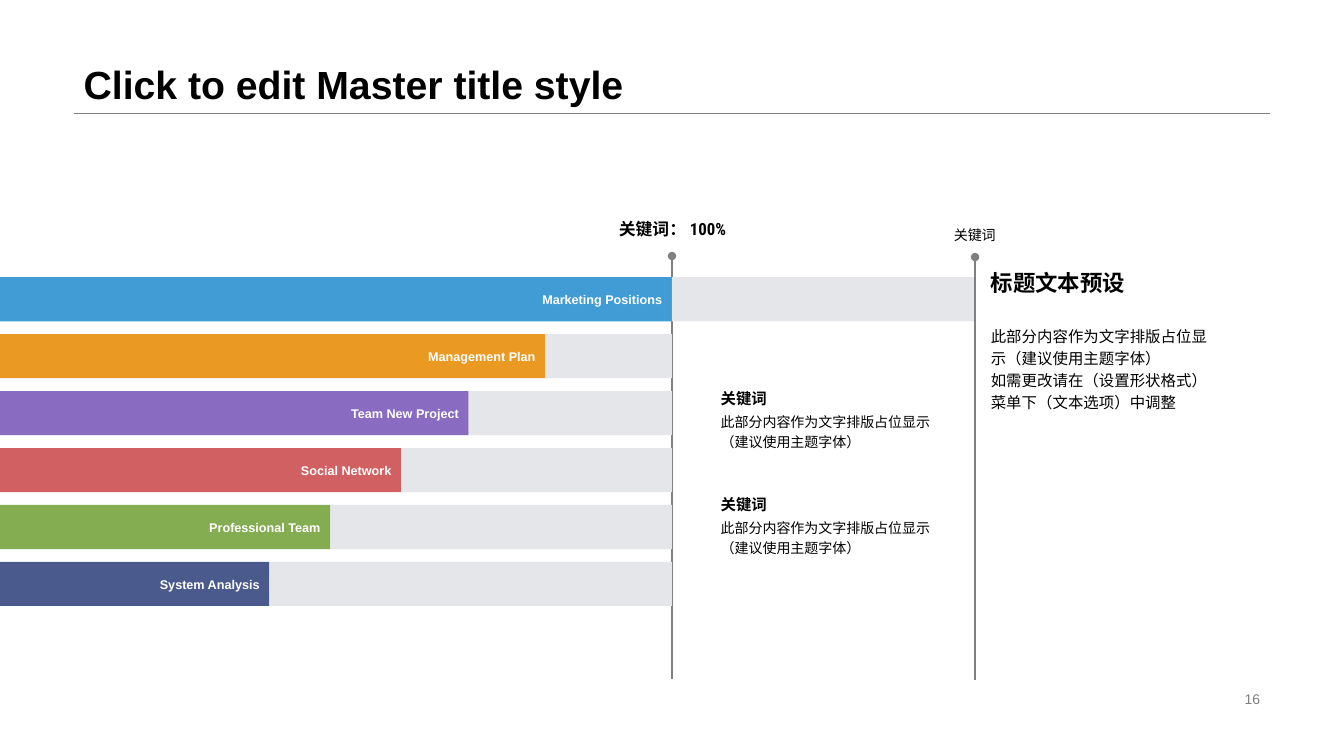
import dataclasses

import lxml.etree
import pptx
import pptx.dml.color
import pptx.enum.shapes
import pptx.enum.text
import pptx.oxml.ns
import pptx.util

ALIGN = pptx.enum.text.PP_ALIGN
ANCHOR = pptx.enum.text.MSO_ANCHOR
RECTANGLE = pptx.enum.shapes.MSO_SHAPE.RECTANGLE


@dataclasses.dataclass(frozen=True)
class Theme:
    font: str = "Arial"
    accent_font: str = "Roboto Condensed"
    ink: str = "000000"
    paper: str = "FFFFFF"
    gray: str = "808080"
    track: str = "E4E6EA"
    title: int = 28
    heading: int = 16
    percent: int = 12
    body: int = 11
    small: int = 10
    label: int = 9


theme = Theme()
deck = pptx.Presentation()
deck.slide_width = pptx.util.Inches(13.33)
deck.slide_height = pptx.util.Inches(7.5)
column = deck.slide_width / 40
row = deck.slide_height / 30
page = deck.slides.add_slide(deck.slide_layouts[5])


def write(box, text, size=theme.body, color=theme.ink, font=theme.font, bold=False,
          align=ALIGN.LEFT, anchor=ANCHOR.MIDDLE, spacing=1.0, inset=None, wrap=True):
    frame = box.text_frame
    frame.auto_size = pptx.enum.text.MSO_AUTO_SIZE.NONE
    frame.word_wrap = wrap
    frame.vertical_anchor = anchor
    if inset is not None:
        frame.margin_left = frame.margin_right = inset
        frame.margin_top = frame.margin_bottom = inset
    para = frame.paragraphs[0]
    para.text = text
    para.alignment = align
    para.line_spacing = spacing
    for span in para.runs:
        span.font.name = font
        span.font.size = pptx.util.Pt(size)
        span.font.bold = bold
        span.font.color.rgb = pptx.dml.color.RGBColor.from_string(color)


def draw_line(left, top, right, bottom, weight, dot=False):
    line = page.shapes.add_connector(
        pptx.enum.shapes.MSO_CONNECTOR.STRAIGHT,
        int(column * left), int(row * top), int(column * right), int(row * bottom))
    line.line.color.rgb = pptx.dml.color.RGBColor.from_string(theme.gray)
    line.line.width = pptx.util.Pt(weight)
    if dot:
        outline = line.line._get_or_add_ln()
        lxml.etree.SubElement(outline, pptx.oxml.ns.qn("a:headEnd"), type="oval")
    lxml.etree.SubElement(line._element.spPr, pptx.oxml.ns.qn("a:effectLst"))


title = page.shapes.title
title.left, title.top = int(column * 2.19), 0
title.width, title.height = int(column * 35.61), int(row * 4.48)
write(title, "Click to edit Master title style", size=theme.title, bold=True,
      anchor=ANCHOR.BOTTOM, spacing=0.9)
draw_line(2.19, 4.48, 37.8, 4.48, 0.25)

FIRST_BAR, BAR_PITCH, BAR_HEIGHT = 11, 2.26, 1.75
FULL, EXTENDED = 20, 29.02
projects = [
    ("Marketing Positions", FULL, EXTENDED, "419CD6"),
    ("Management Plan", 16.23, FULL, "EA9922"),
    ("Team New Project", 13.95, FULL, "8A6BC2"),
    ("Social Network", 11.94, FULL, "D06061"),
    ("Professional Team", 9.83, FULL, "84AD52"),
    ("System Analysis", 8.02, FULL, "4A5A8C"),
]
bars = [(index, 0, end, color, name)
        for index, (name, end, limit, color) in enumerate(projects)]
tracks = [(index, end, limit, theme.track, "")
          for index, (name, end, limit, color) in enumerate(projects)]

for group in (bars, tracks):
    for index, start, end, color, name in group:
        bar = page.shapes.add_shape(
            RECTANGLE, int(column * start), int(row * (FIRST_BAR + BAR_PITCH * index)),
            int(column * (end - start)), int(row * BAR_HEIGHT))
        bar.shadow.inherit = False
        bar.fill.solid()
        bar.fill.fore_color.rgb = pptx.dml.color.RGBColor.from_string(color)
        bar.line.fill.background()
        if name:
            write(bar, name, size=theme.label, color=theme.paper, bold=True, align=ALIGN.RIGHT)
    if group is bars:
        draw_line(FULL, 10.16, FULL, 26.96, 1, dot=True)
draw_line(EXTENDED, 10.2, EXTENDED, 27, 1, dot=True)

note = "此部分内容作为文字排版占位显示\n（建议使用主题字体）"
summary = ("此部分内容作为文字排版占位显示（建议使用主题字体）\n"
           "如需更改请在（设置形状格式）菜单下（文本选项）中调整")
texts = [
    (28.26, 27.28, 9.54, 0.92, "16",
     dict(size=theme.small, color=theme.gray, align=ALIGN.RIGHT)),
    (18.42, 8.68, 3.21, 1.28, "关键词： 100%",
     dict(size=theme.percent, font=theme.accent_font, bold=True, anchor=ANCHOR.TOP,
          inset=0, wrap=False)),
    (28.14, 8.8, 1.74, 1.08, "关键词", dict(size=theme.small, align=ALIGN.CENTER, inset=0)),
    (29.49, 12.2, 6.51, 4.76, summary, dict(spacing=1.2, inset=0)),
    (29.49, 10.2, 6.51, 2, "标题文本预设", dict(size=theme.heading, bold=True, inset=0)),
]
for top in (15.32, 19.52):
    texts += [
        (21.45, top, 1.86, 0.96, "关键词", dict(bold=True, inset=0)),
        (21.45, top + 0.96, 6.39, 1.76, note,
         dict(size=theme.small, anchor=ANCHOR.TOP, spacing=1.2, inset=0)),
    ]
for left, top, width, height, text, style in texts:
    box = page.shapes.add_textbox(
        int(column * left), int(row * top), int(column * width), int(row * height))
    write(box, text, **style)

deck.save("out.pptx")
